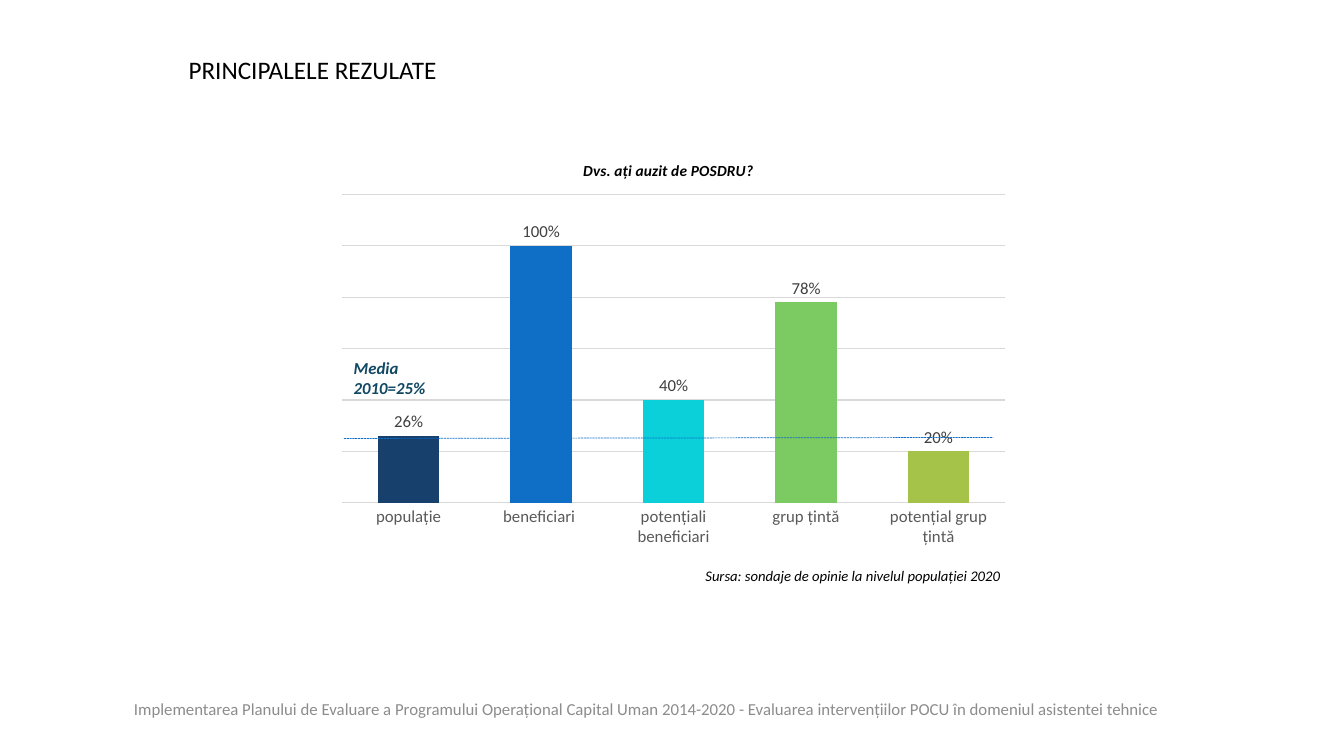
import pptx
import pptx.util
import pptx.chart.data
import pptx.dml.color
import pptx.enum.chart
import pptx.enum.dml
import pptx.enum.shapes
import pptx.enum.text
import pptx.oxml
import pptx.oxml.ns
from lxml import etree

RGB = pptx.dml.color.RGBColor
BLACK = RGB(0x00, 0x00, 0x00)
NAVY = RGB(0x17, 0x40, 0x6D)
BLUE = RGB(0x0F, 0x6F, 0xC6)
CYAN = RGB(0x0B, 0xD0, 0xD9)
GREEN = RGB(0x7C, 0xCA, 0x62)
OLIVE = RGB(0xA5, 0xC2, 0x49)
TEAL = RGB(0x11, 0x48, 0x64)
DARK = RGB(0x40, 0x40, 0x40)
GREY = RGB(0x59, 0x59, 0x59)
PALE = RGB(0x8C, 0x8C, 0x8C)
GRID = RGB(0xD9, 0xD9, 0xD9)

FONT = "Calibri"
SCALE = 9144  # EMU in one px, 100 px to the inch
ALIGN = pptx.enum.text.PP_ALIGN
ANCHOR = pptx.enum.text.MSO_ANCHOR

BARS = [
    ("populație", 0.26, NAVY),
    ("beneficiari ", 1, BLUE),
    ("potențiali beneficiari", 0.4, CYAN),
    ("grup țintă", 0.78, GREEN),
    ("potențial grup țintă", 0.2, OLIVE),
]


def px(*nums):
    return [pptx.util.Emu(num * SCALE) for num in nums]


def style(font, size, color, bold=False, italic=False):
    font.name = FONT
    font.size = pptx.util.Pt(size)
    font.color.rgb = color
    font.bold = bold
    font.italic = italic


def fill_text(shape, text, size, color, align=ALIGN.LEFT,
              anchor=ANCHOR.TOP, bold=False, italic=False):
    frame = shape.text_frame
    frame.word_wrap = True
    frame.vertical_anchor = anchor
    para = frame.paragraphs[0]
    para.alignment = align
    run = para.add_run()
    run.text = text
    style(run.font, size, color, bold, italic)


def add_text(slide, box, text, size, color, **look):
    fill_text(slide.shapes.add_textbox(*px(*box)), text, size, color, **look)


def add_title(slide, box, text):
    title = slide.shapes.title
    title.left, title.top, title.width, title.height = px(*box)
    fill_text(title, text, 18, BLACK)


def add_line(slide, ends, color):
    kind = pptx.enum.shapes.MSO_CONNECTOR.STRAIGHT
    line = slide.shapes.add_connector(kind, *px(*ends))
    line.line.color.rgb = color
    line.line.width = pptx.util.Pt(0.5)
    line.line.dash_style = pptx.enum.dml.MSO_LINE.SQUARE_DOT
    props = line._element.spPr
    etree.SubElement(props, pptx.oxml.ns.qn("a:effectLst"))


def set_plot(chart, x, y, w, h):
    """Fix the inner plot area as shares of the chart frame."""
    qn = pptx.oxml.ns.qn
    area = chart._chartSpace.chart.plotArea
    for old in area.findall(qn("c:layout")):
        area.remove(old)
    layout = etree.Element(qn("c:layout"))
    manual = etree.SubElement(layout, qn("c:manualLayout"))
    parts = [("layoutTarget", "inner"), ("xMode", "edge"), ("yMode", "edge"),
             ("x", x), ("y", y), ("w", w), ("h", h)]
    for tag, val in parts:
        etree.SubElement(manual, qn("c:" + tag)).set("val", str(val))
    area.insert(0, layout)


def grey_line(line):
    line.color.rgb = GRID
    line.width = pptx.util.Pt(0.75)


def add_chart(slide, box, title):
    enum = pptx.enum.chart
    data = pptx.chart.data.CategoryChartData(number_format="0%")
    data.categories = [name for name, _, _ in BARS]
    data.add_series("Series 1", [val for _, val, _ in BARS])
    kind = enum.XL_CHART_TYPE.COLUMN_CLUSTERED
    chart = slide.shapes.add_chart(kind, *px(*box), data).chart
    style(chart.font, 10, BLACK)
    chart.has_legend = False

    # Heading
    chart.has_title = True
    run = chart.chart_title.text_frame.paragraphs[0].add_run()
    run.text = title
    style(run.font, 11, BLACK, bold=True, italic=True)
    chart.chart_title.include_in_layout = False
    set_plot(chart, 0.023, 0.123, 0.969, 0.737)

    # Axes
    cats, vals = chart.category_axis, chart.value_axis
    cats.major_tick_mark = enum.XL_TICK_MARK.NONE
    style(cats.tick_labels.font, 12, GREY)
    grey_line(cats.format.line)
    vals.visible = False
    vals.minimum_scale, vals.maximum_scale = 0, 1.2
    vals.major_unit = 0.2
    vals.has_major_gridlines = True
    grey_line(vals.major_gridlines.format.line)

    # Bars and their labels
    plot = chart.plots[0]
    plot.gap_width, plot.overlap = 115, 58
    plot.vary_by_categories = False
    bars = plot.series[0]
    bars.format.fill.solid()
    bars.format.fill.fore_color.rgb = CYAN
    for i, (_, _, color) in enumerate(BARS):
        fill = bars.points[i].format.fill
        fill.solid()
        fill.fore_color.rgb = color
    labels = bars.data_labels
    labels.show_value = True
    labels.number_format = "0%"
    labels.number_format_is_linked = False
    labels.position = enum.XL_LABEL_POSITION.OUTSIDE_END
    style(labels.font, 12, DARK)


def main():
    deck = pptx.Presentation()
    deck.slide_width, deck.slide_height = px(1333, 750)
    slide = deck.slides.add_slide(deck.slide_layouts[5])

    add_title(slide, (177, 49, 717, 40), "PRINCIPALELE REZULATE")

    # Survey chart with its source
    add_chart(slide, (324, 142, 678, 415), "Dvs. ați auzit de POSDRU?")
    add_text(slide, (470, 557, 532, 29),
             "Sursa: sondaje de opinie la nivelul populației 2020",
             10.5, BLACK, align=ALIGN.RIGHT, italic=True)

    # Mean of 2010
    add_line(slide, (341, 435, 985, 434), BLUE)
    add_text(slide, (341, 350, 119, 50), "Media 2010=25%",
             12, TEAL, bold=True, italic=True)

    # Footer
    add_text(slide, (123, 679, 1105, 48),
             "Implementarea Planului de Evaluare a Programului Operațional "
             "Capital Uman 2014-2020 - Evaluarea intervențiilor POCU în "
             "domeniul asistentei tehnice",
             12, PALE, anchor=ANCHOR.MIDDLE)

    deck.save("out.pptx")


if __name__ == "__main__":
    main()
